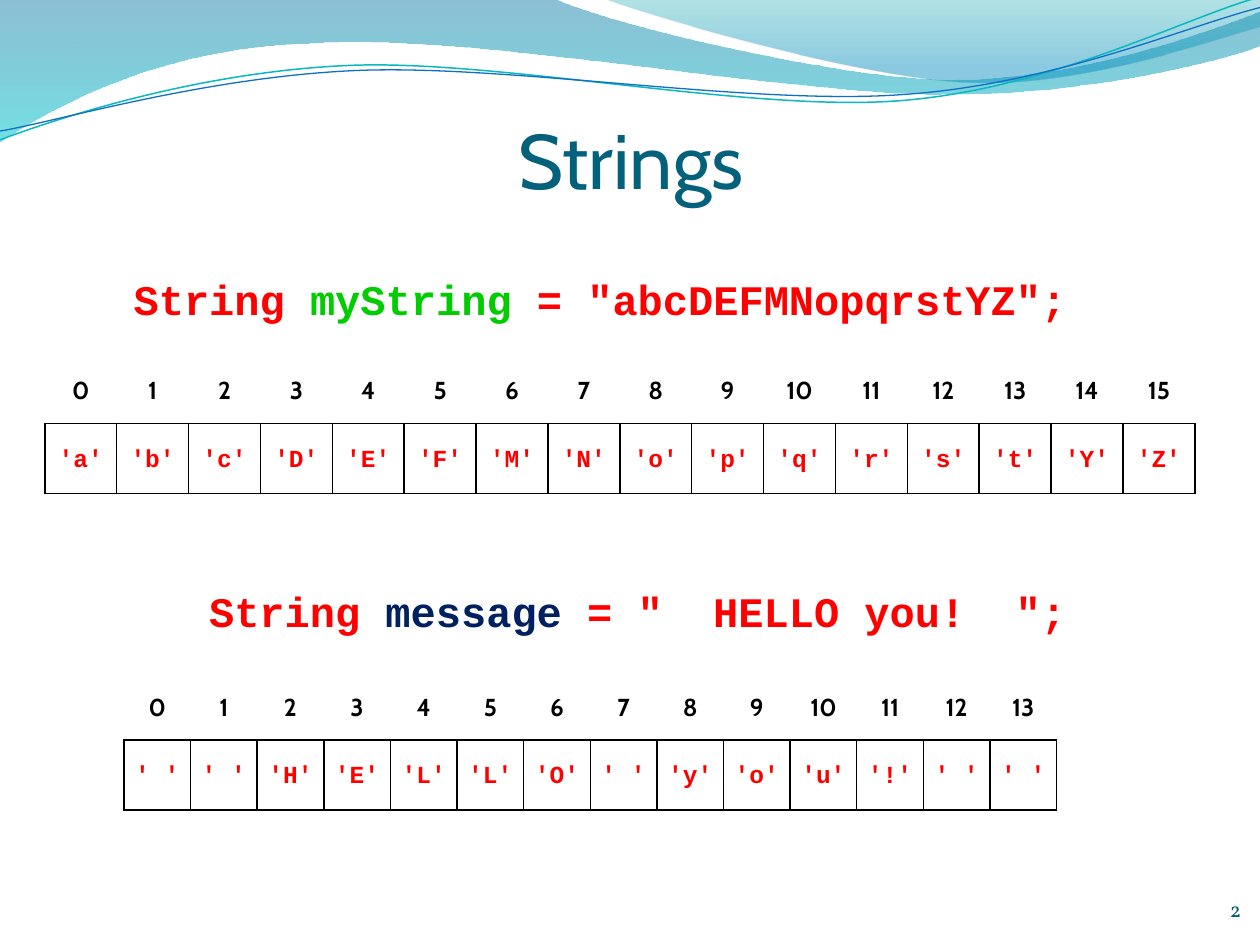
"""Build a slide that shows two strings as indexed rows of characters."""
from math import cos, radians, sin

from pptx import Presentation
from pptx.dml.color import RGBColor
from pptx.enum.text import MSO_ANCHOR, PP_ALIGN
from pptx.oxml import parse_xml
from pptx.oxml.ns import nsdecls, qn
from pptx.util import Pt
from lxml import etree

TOP, MID, LOW = MSO_ANCHOR.TOP, MSO_ANCHOR.MIDDLE, MSO_ANCHOR.BOTTOM
CENTER, RIGHT = PP_ALIGN.CENTER, PP_ALIGN.RIGHT

THEME = {
    "title": ("Cabin", 44.1, "04617B", False),
    "page": ("Vollkorn", 12, "045D75", False),
    "code": ("Courier New", 24, "FF0000", True),
    "index": ("Cabin", 14, "000000", True),
    "char": ("Courier New", 14, "FF0000", True),
    "cell": "FFFFFF",
    "rule": "000000",
    "grid": "{2D5ABB26-0587-4C30-8999-92F81FD0307C}",
}

TITLE = ("Strings", "title", (36.7, 60.5, 648, 56.9), (0, 3.6, 0, 0), CENTER)
PAGE = ("2", "page", (649.4, 498.2, 59.8, 28.8), (0, 0, 0, 0), RIGHT)
BODY = ((36, 152.6, 648, 345.6), (7.2, 3.6, 7.2, 3.6))

STRINGS = [
    {"name": "myString", "color": "00CC00", "value": "abcDEFMNopqrstYZ",
     "gap": 0, "inset": 43, "grid": (25.6, 202), "col": 41.1,
     "pad": (7.2, 3.6)},
    {"name": "message", "color": "002060", "value": "  HELLO you!  ",
     "gap": 149.8, "inset": 0, "grid": (70.8, 383), "col": 38.07,
     "pad": (5, 0)},
]
ROW = 40
INDENT = 8.64

WAVES = [
    ([(0, 0), (316.8, -0.7),
      (342.7, 12.2, 478.1, 45.4, 545.8, 45.4),
      (614.2, 45.4, 689.8, 18.7, 720, 6.5), (720.7, 25.9),
      (707.8, 31.7, 626.4, 54.7, 537.1, 54),
      (447.8, 54, 275, 20.2, 185, 24.5),
      (92.9, 25.9, 33.1, 59.8, -0.7, 81.4), (0, 0)],
     [(0, "0074A1", 45), (1, "00C6CF", 55)]),
    ([(344.9, -0.7), (366.5, 7.9, 491, 44.6, 553.7, 46.8),
      (616.3, 49.7, 691.9, 23, 720, 15.1), (720, 0), (344.9, -0.7)],
     [(0, "00A1A9", 30), (0.8, "008BBF", 45)]),
]
LINES = [
    ([(0, 79.9), (34.6, 67, 113.8, 41, 199.4, 37.4),
      (284.4, 33.8, 427, 64.1, 513.4, 57.6),
      (599.8, 51.1, 675.4, 10.8, 718.6, -1.4)],
     (359.3, 41.4), "0AB8BF", 0.85),
    ([(0, 74.9), (33.8, 69.1, 118.1, 43.9, 203.8, 40.3),
      (290.2, 36.7, 429.8, 60.5, 516.2, 54),
      (601.9, 48.2, 677.5, 15.1, 720, 4.3)],
     (359.6, 42.5), "0F6FC6", 0.75),
]
TILT = 2.7


def rgb(code):
    """Turn a hex code into a colour."""
    return RGBColor.from_string(code)


def pairs(part):
    """Split a flat row of numbers into points."""
    return list(zip(part[::2], part[1::2]))


def level(part, hub):
    """Turn the points of a part about a hub by the tilt."""
    c, s = cos(radians(TILT)), sin(radians(TILT))
    flat = ()
    for x, y in pairs(part):
        dx, dy = x - hub[0], y - hub[1]
        flat += (hub[0] + dx * c - dy * s, hub[1] + dx * s + dy * c)
    return flat


def draw(shapes, route, close):
    """Draw a freeform of straight sides and cubic curves."""
    ends = [(Pt(part[-2]), Pt(part[-1])) for part in route]
    pen = shapes.build_freeform(*ends[0])
    pen.add_line_segments(ends[1:], close=close)
    shape = pen.convert_to_shape()
    shape.shadow.inherit = False
    sides = list(shape._element.iter(qn("a:lnTo")))
    for side, part in zip(sides, route[1:]):
        if len(part) == 6:
            side.tag = qn("a:cubicBezTo")
            side.clear()
            for x, y in pairs(part):
                spot = etree.SubElement(side, qn("a:pt"))
                spot.set("x", str(Pt(x) - shape.left))
                spot.set("y", str(Pt(y) - shape.top))
    return shape


def add_wave(shapes, route, stops):
    """Add a see-through wave with a vertical gradient."""
    shape = draw(shapes, route, True)
    shape.line.fill.background()
    shape.fill.gradient()
    shape.fill.gradient_angle = 270
    for stop, (place, color, _) in zip(shape.fill.gradient_stops, stops):
        stop.position = place
        stop.color.rgb = rgb(color)
    tags = shape._element.spPr.iter(qn("a:srgbClr"))
    for tag, (_, _, alpha) in zip(tags, stops):
        etree.SubElement(tag, qn("a:alpha")).set("val", str(alpha * 1000))


def add_line(shapes, route, hub, color, width):
    """Add a thin curved line, tilted about its hub."""
    shape = draw(shapes, [level(part, hub) for part in route], False)
    shape.rotation = 360 - TILT
    shape.fill.background()
    shape.line.color.rgb = rgb(color)
    shape.line.width = Pt(width)


def style(font, kind):
    """Give a font the look of its kind."""
    font.name, size, color, font.bold = THEME[kind]
    font.size = Pt(size)
    font.color.rgb = rgb(color)


def add_frame(shapes, box, pad, anchor):
    """Add a wrapping text box and return its frame."""
    frame = shapes.add_textbox(*map(Pt, box)).text_frame
    frame.word_wrap = True
    frame.vertical_anchor = anchor
    frame.margin_left, frame.margin_top = Pt(pad[0]), Pt(pad[1])
    frame.margin_right, frame.margin_bottom = Pt(pad[2]), Pt(pad[3])
    return frame


def add_label(shapes, text, kind, box, pad, align):
    """Add one line of text that sits on the foot of its box."""
    para = add_frame(shapes, box, pad, LOW).paragraphs[0]
    para.text = text
    para.alignment = align
    style(para.font, kind)


def add_code(shapes):
    """Add the code lines, one paragraph for each string."""
    frame = add_frame(shapes, *BODY, TOP)
    for spot, item in enumerate(STRINGS):
        para = frame.add_paragraph() if spot else frame.paragraphs[0]
        para.alignment = CENTER
        para.space_before = Pt(item["gap"])
        style(para.font, "code")
        props = para._p.get_or_add_pPr()
        props.set("marL", str(Pt(INDENT)))
        props.set("marR", str(Pt(item["inset"])))
        for text in ("String ", item["name"], f' = "{item["value"]}";'):
            run = para.add_run()
            run.text = text
        para.runs[1].font.color.rgb = rgb(item["color"])


def fill_cell(cell, text, kind, pad, sides=""):
    """Set the text, padding, fill and borders of a cell."""
    cell.vertical_anchor = MID
    cell.margin_left = cell.margin_right = Pt(pad[0])
    cell.margin_top = cell.margin_bottom = Pt(pad[1])
    cell.fill.solid()
    cell.fill.fore_color.rgb = rgb(THEME["cell"])
    para = cell.text_frame.paragraphs[0]
    para.text = text
    para.alignment = CENTER
    para.line_spacing = 1.15
    para.space_before, para.space_after = Pt(3), Pt(6)
    style(para.font, kind)
    for spot, side in enumerate(sides):
        cell._tc.get_or_add_tcPr().insert(spot, parse_xml(
            f'<a:ln{side} {nsdecls("a")} w="12700"><a:solidFill>'
            f'<a:srgbClr val="{THEME["rule"]}"/></a:solidFill></a:ln{side}>'))


def add_grid(shapes, item):
    """Add the table of indexes and characters."""
    value, col, pad = item["value"], item["col"], item["pad"]
    box = item["grid"] + (col * len(value), 2 * ROW)
    table = shapes.add_table(2, len(value), *map(Pt, box)).table
    table.first_row = table.horz_banding = False
    table._tbl.tblPr.find(qn("a:tableStyleId")).text = THEME["grid"]
    for spot, char in enumerate(value):
        table.columns[spot].width = Pt(col)
        fill_cell(table.cell(0, spot), str(spot), "index", pad)
        fill_cell(table.cell(1, spot), f"'{char}'", "char", pad, "LRTB")


def main():
    """Build and save the slide."""
    deck = Presentation()
    deck.slide_width, deck.slide_height = Pt(720), Pt(540)
    shapes = deck.slides.add_slide(deck.slide_layouts[6]).shapes
    for wave in WAVES:
        add_wave(shapes, *wave)
    for line in LINES:
        add_line(shapes, *line)
    add_label(shapes, *PAGE)
    add_label(shapes, *TITLE)
    add_code(shapes)
    for item in STRINGS:
        add_grid(shapes, item)
    deck.save("out.pptx")


if __name__ == "__main__":
    main()
